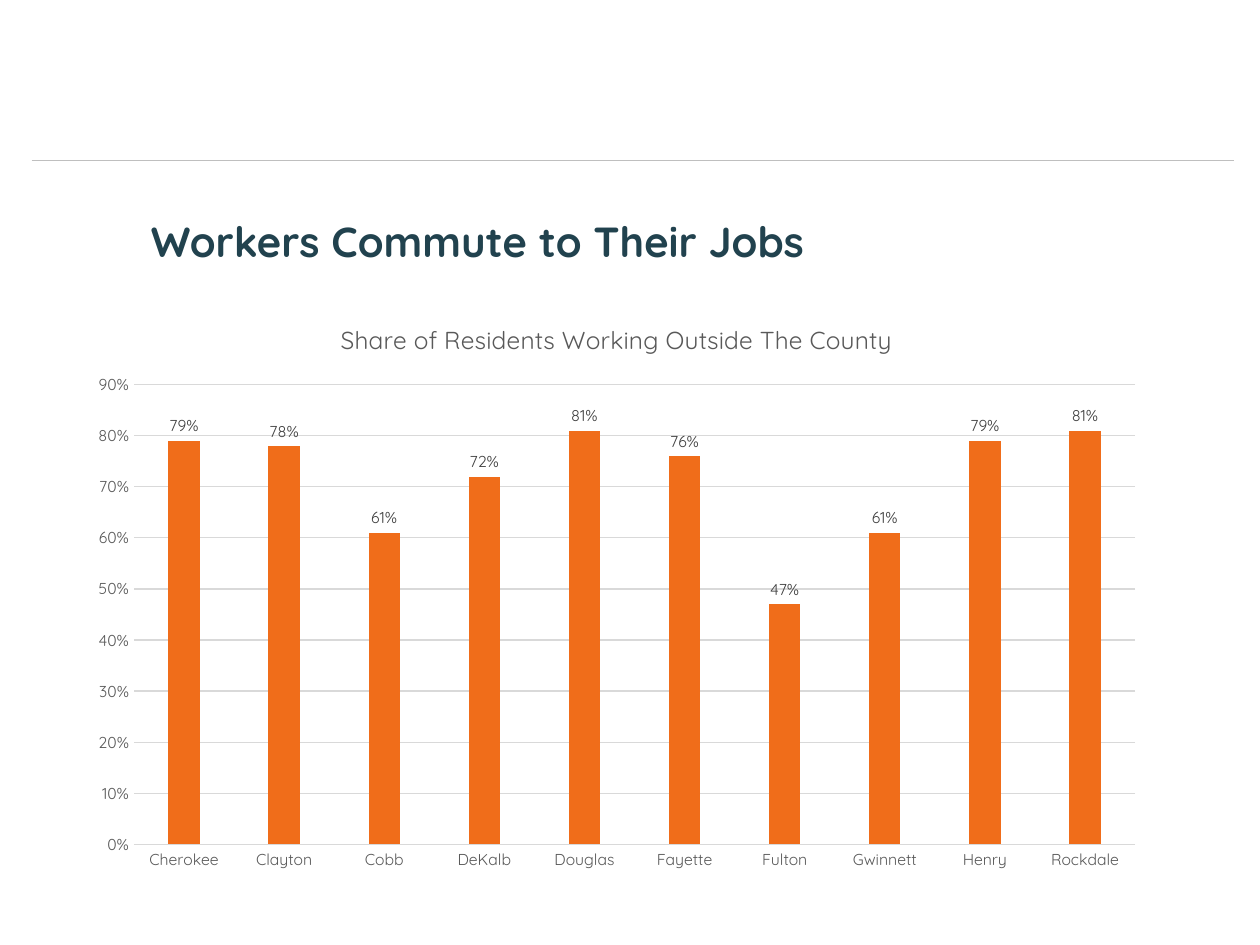
from dataclasses import dataclass

from lxml import etree
from pptx import Presentation
from pptx.chart.data import CategoryChartData
from pptx.dml.color import RGBColor
from pptx.enum.chart import XL_CHART_TYPE, XL_LABEL_POSITION, XL_TICK_MARK
from pptx.enum.shapes import MSO_CONNECTOR
from pptx.enum.text import MSO_ANCHOR
from pptx.oxml.ns import qn
from pptx.util import Inches, Pt

COLUMNS = XL_CHART_TYPE.COLUMN_CLUSTERED
ABOVE_BAR = XL_LABEL_POSITION.OUTSIDE_END
NO_TICK = XL_TICK_MARK.NONE
STRAIGHT = MSO_CONNECTOR.STRAIGHT
TOP = MSO_ANCHOR.TOP

WIDTH, HEIGHT = 10, 7.5


@dataclass(frozen=True)
class Theme:
    font: str = "Quicksand"
    heading: str = "21424E"
    bar: str = "F06D1A"
    axis_text: str = "595959"
    label_text: str = "404040"
    grid: str = "D9D9D9"
    rule: str = "BFBFBF"
    heading_size: float = 24
    title_size: float = 14
    small_size: float = 9
    grid_width: float = 0.75
    rule_width: float = 0.5


class SlideBuilder:
    """Holds the theme and the current page; positions are shares of the page."""

    def __init__(self, deck, theme):
        self.deck = deck
        self.theme = theme
        self.page = deck.slides.add_slide(deck.slide_layouts[6])

    def across(self, share):
        return round(self.deck.slide_width * share)

    def down(self, share):
        return round(self.deck.slide_height * share)

    def frame(self, left, top, width, height):
        return self.across(left), self.down(top), self.across(width), self.down(height)

    def style_font(self, font, size, color, bold=False):
        font.name = self.theme.font
        font.size = Pt(size)
        font.bold = bold
        font.color.rgb = RGBColor.from_string(color)

    def style_line(self, line, color, width):
        line.color.rgb = RGBColor.from_string(color)
        line.width = Pt(width)

    def rule(self, left, right, top):
        y = self.down(top)
        line = self.page.shapes.add_connector(
            STRAIGHT, self.across(left), y, self.across(right), y)
        self.style_line(line.line, self.theme.rule, self.theme.rule_width)
        etree.SubElement(line._element.spPr, qn("a:effectLst"))

    def heading(self, text, *shares):
        box = self.page.shapes.add_textbox(*self.frame(*shares))
        box.text_frame.word_wrap = True
        box.text_frame.vertical_anchor = TOP
        para = box.text_frame.paragraphs[0]
        para.text = text
        self.style_font(para.font, self.theme.heading_size, self.theme.heading, bold=True)

    def column_chart(self, title, values, *shares):
        theme = self.theme
        data = CategoryChartData(number_format="0%")
        data.categories = list(values)
        data.add_series("Series 1", list(values.values()))
        chart = self.page.shapes.add_chart(COLUMNS, *self.frame(*shares), data).chart
        chart.has_legend = False
        self.style_font(chart.font, theme.small_size, theme.axis_text)

        # Chart title
        chart.has_title = True
        chart.chart_title.include_in_layout = False
        para = chart.chart_title.text_frame.paragraphs[0]
        para.text = title
        self.style_font(para.font, theme.title_size, theme.axis_text)

        # Axes and gridlines
        category_axis, value_axis = chart.category_axis, chart.value_axis
        for axis in (category_axis, value_axis):
            axis.major_tick_mark = axis.minor_tick_mark = NO_TICK
            self.style_font(axis.tick_labels.font, theme.small_size, theme.axis_text)
        self.style_line(category_axis.format.line, theme.grid, theme.grid_width)
        self.style_line(value_axis.major_gridlines.format.line, theme.grid, theme.grid_width)
        value_axis.format.line.fill.background()
        value_axis.minimum_scale, value_axis.maximum_scale = 0, 0.9
        value_axis.major_unit = 0.1
        value_axis.tick_labels.number_format = "0%"
        value_axis.tick_labels.number_format_is_linked = False

        # Bars and their labels
        plot = chart.plots[0]
        plot.gap_width, plot.overlap = 219, -27
        plot.vary_by_categories = False
        series = plot.series[0]
        series.format.fill.solid()
        series.format.fill.fore_color.rgb = RGBColor.from_string(theme.bar)
        labels = series.data_labels
        labels.show_value = True
        labels.position = ABOVE_BAR
        labels.number_format = "0%"
        labels.number_format_is_linked = False
        self.style_font(labels.font, theme.small_size, theme.label_text)


def main():
    deck = Presentation()
    deck.slide_width, deck.slide_height = Inches(WIDTH), Inches(HEIGHT)
    slide = SlideBuilder(deck, Theme())

    # Header
    slide.rule(0.25 / WIDTH, 9.79 / WIDTH, 1.27 / HEIGHT)
    slide.heading("Workers Commute to Their Jobs",
                  1.1 / WIDTH, 1.66 / HEIGHT, 6.77 / WIDTH, 0.39 / HEIGHT)

    # Commuters by county
    commuters = {
        "Cherokee": 0.79, "Clayton": 0.78, "Cobb": 0.61, "DeKalb": 0.72,
        "Douglas": 0.81, "Fayette": 0.76, "Fulton": 0.47, "Gwinnett": 0.61,
        "Henry": 0.79, "Rockdale": 0.81,
    }
    slide.column_chart("Share of Residents Working Outside The County", commuters,
                       0.61 / WIDTH, 2.37 / HEIGHT, 8.57 / WIDTH, 4.62 / HEIGHT)

    deck.save("out.pptx")


if __name__ == "__main__":
    main()
